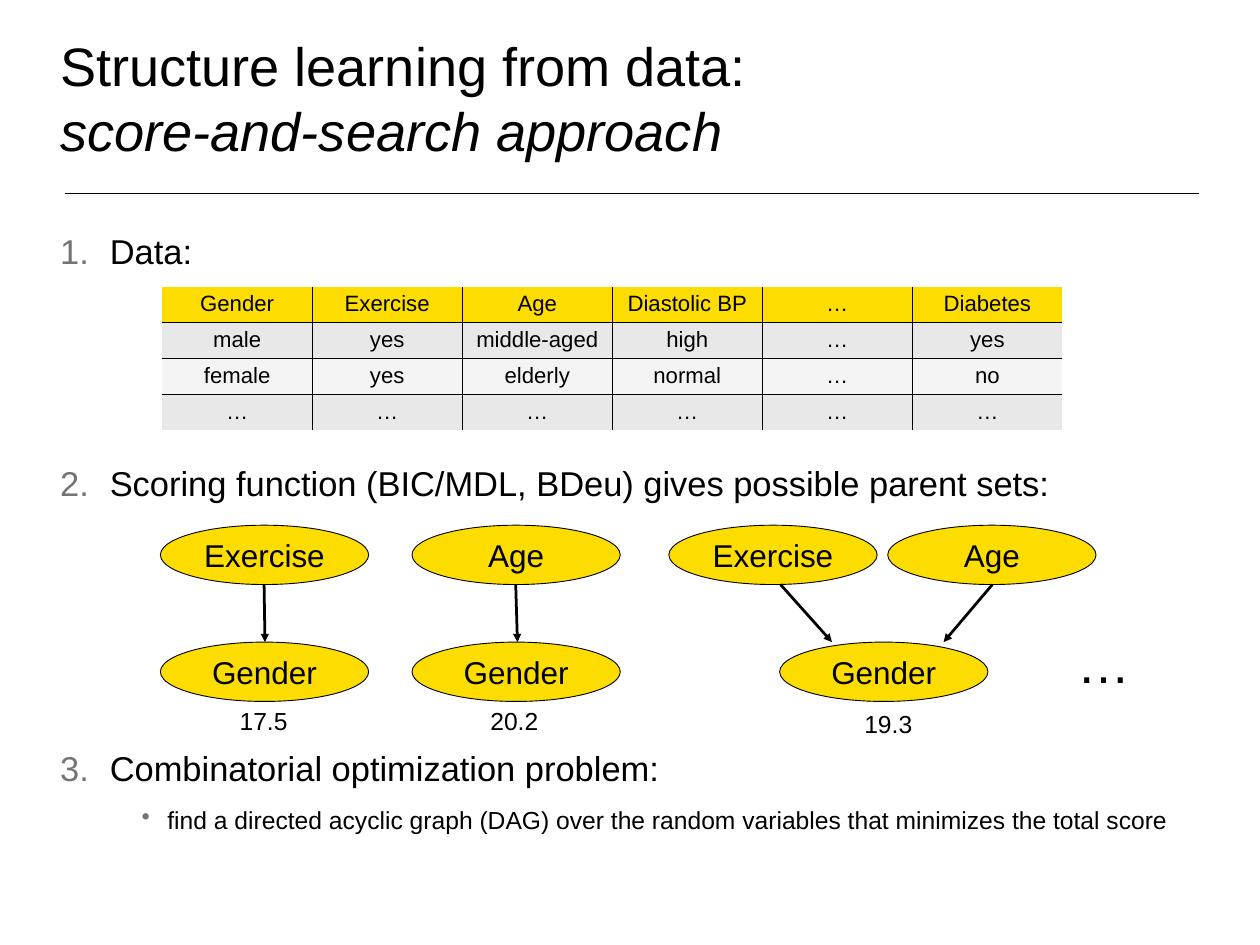
from dataclasses import dataclass

from pptx import Presentation
from pptx.dml.color import RGBColor
from pptx.enum.shapes import MSO_CONNECTOR, MSO_SHAPE
from pptx.enum.text import MSO_ANCHOR, PP_ALIGN
from pptx.oxml.ns import qn
from pptx.util import Emu, Inches, Pt
from lxml import etree

OVAL = MSO_SHAPE.OVAL
LINE = MSO_CONNECTOR.STRAIGHT
LEFT, MID = PP_ALIGN.LEFT, PP_ALIGN.CENTER
TOP, CENTER, BOTTOM = MSO_ANCHOR.TOP, MSO_ANCHOR.MIDDLE, MSO_ANCHOR.BOTTOM

FONT = "Arial"
BLACK, GOLD, GRAY = "000000", "FDDD00", "747474"
BANDS = ["E8E8E8", "F4F4F4"]
PLAIN = "{2D5ABB26-0587-4C30-8999-92F81FD0307C}"
WIDE, HIGH = Inches(14.22), Inches(10.67)

# All places below are percent of the slide's width or height
OVAL_W, OVAL_H = 16.53, 6.28
PARENT_Y, CHILD_Y = 55.58, 67.95


@dataclass
class Parent:
    name: str
    left: float
    start: float
    tip: float


@dataclass
class Family:
    left: float
    parents: list[Parent]
    score: str
    mid: float
    top: float


@dataclass
class Step:
    text: str
    gap: float
    sub: bool = False


ROWS = [
    ["Gender", "Exercise", "Age", "Diastolic BP", "…", "Diabetes"],
    ["male", "yes", "middle-aged", "high", "…", "yes"],
    ["female", "yes", "elderly", "normal", "…", "no"],
    ["…"] * 6,
]
STEPS = [
    Step("Data:", 0),
    Step("Scoring function (BIC/MDL, BDeu) gives possible parent sets:", 154.5),
    Step("Combinatorial optimization problem:", 198.5),
    Step("find a directed acyclic graph (DAG) over the random variables "
         "that minimizes the total score", 13, True),
]
SETS = [
    Family(12.73, [Parent("Exercise", 12.73, 20.96, 21.03)], "17.5", 20.92, 74.23),
    Family(32.7, [Parent("Age", 32.7, 40.93, 41.07)], "20.2", 40.82, 74.23),
    Family(61.88, [Parent("Exercise", 53.09, 61.95, 66.03),
                   Parent("Age", 70.46, 78.76, 74.89)], "19.3", 70.5, 74.6),
]


def x(share: float) -> Emu:
    return Emu(round(WIDE * share / 100))


def y(share: float) -> Emu:
    return Emu(round(HIGH * share / 100))


def color(code: str) -> RGBColor:
    return RGBColor.from_string(code)


def style(para, size: float, align=LEFT) -> None:
    para.alignment = align
    font = para.font
    font.name, font.size, font.bold = FONT, Pt(size), False
    font.color.rgb = color(BLACK)


def add_box(slide, left: float, top: float, width: float, height: float, anchor=TOP):
    box = slide.shapes.add_textbox(x(left), y(top), x(width), y(height))
    frame = box.text_frame
    frame.word_wrap = True
    frame.vertical_anchor = anchor
    frame.margin_left = frame.margin_right = Inches(0.06)
    frame.margin_top = frame.margin_bottom = Inches(0.06)
    return frame


def add_label(slide, text: str, mid: float, top: float, width: float,
              height: float, size: float) -> None:
    frame = add_box(slide, mid - width / 2, top, width, height)
    frame.margin_top = frame.margin_bottom = Inches(0.05)
    frame.word_wrap = False
    frame.text = text
    style(frame.paragraphs[0], size, MID)


def add_line(slide, x1: float, y1: float, x2: float, y2: float,
             weight: float, arrow: bool = False) -> None:
    line = slide.shapes.add_connector(LINE, x(x1), y(y1), x(x2), y(y2))
    line.line.color.rgb = color(BLACK)
    line.line.width = Pt(weight)
    if arrow:
        etree.SubElement(line.line._get_or_add_ln(), qn("a:tailEnd"), type="triangle")
    etree.SubElement(line._element.spPr, qn("a:effectLst"))


def add_node(slide, text: str, left: float, top: float) -> None:
    node = slide.shapes.add_shape(OVAL, x(left), y(top), x(OVAL_W), y(OVAL_H))
    node.shadow.inherit = False
    node.fill.solid()
    node.fill.fore_color.rgb = color(GOLD)
    node.line.color.rgb = color(BLACK)
    node.line.width = Pt(0.75)
    frame = node.text_frame
    frame.word_wrap = False
    frame.vertical_anchor = CENTER
    frame.text = text
    style(frame.paragraphs[0], 25.6, MID)


def add_step(para, step: Step) -> None:
    para.text = step.text
    style(para, 20 if step.sub else 28)
    para.space_before = Pt(step.gap)
    para.level = 1 if step.sub else 0
    indent, hang = (1.21, 0.29) if step.sub else (0.56, 0.56)
    props = para._p.get_or_add_pPr()
    props.set("marL", str(Inches(indent)))
    props.set("indent", str(-Inches(hang)))
    tint = etree.Element(qn("a:buClr"))
    etree.SubElement(tint, qn("a:srgbClr"), val=GRAY)
    mark = etree.Element(qn("a:buChar"), char="•") if step.sub else \
        etree.Element(qn("a:buAutoNum"), type="arabicPeriod")
    font = props.find(qn("a:defRPr"))
    font.addprevious(tint)
    font.addprevious(mark)


def add_grid(slide) -> None:
    count, cols = len(ROWS), len(ROWS[0])
    frame = slide.shapes.add_table(count, cols, x(12.87), y(30.37), x(71.45), y(15.18))
    table = frame.table
    table.first_row = table.horz_banding = False
    table._tbl.tblPr.find(qn("a:tableStyleId")).text = PLAIN
    for r, row in enumerate(ROWS):
        for c, text in enumerate(row):
            cell = table.cell(r, c)
            cell.text = text
            style(cell.text_frame.paragraphs[0], 18, MID)
            # Rules run between cells only
            inner = {"lnL": c > 0, "lnR": c < cols - 1,
                     "lnT": r > 0, "lnB": r < count - 1}
            props = cell._tc.get_or_add_tcPr()
            for side, shown in inner.items():
                if shown:
                    edge = etree.SubElement(props, qn(f"a:{side}"), w=str(Pt(1)))
                    fill = etree.SubElement(edge, qn("a:solidFill"))
                    etree.SubElement(fill, qn("a:srgbClr"), val=BLACK)
            cell.fill.solid()
            cell.fill.fore_color.rgb = color(BANDS[(r - 1) % 2] if r else GOLD)


def main() -> None:
    deck = Presentation()
    deck.slide_width, deck.slide_height = WIDE, HIGH
    slide = deck.slides.add_slide(deck.slide_layouts[6])

    # Title and rule
    title = add_box(slide, 4.36, 3.37, 91.21, 14.34, BOTTOM).paragraphs[0]
    style(title, 44)
    title.add_run().text = "Structure learning from data:"
    title.add_line_break()
    run = title.add_run()
    run.text = "score-and-search approach"
    run.font.italic = True
    add_line(slide, 5.13, 20.43, 95.15, 20.43, 0.75)

    # Numbered steps
    body = add_box(slide, 4.36, 23.81, 91.21, 67.29)
    for i, step in enumerate(STEPS):
        add_step(body.add_paragraph() if i else body.paragraphs[0], step)

    add_grid(slide)

    # Parent sets with their scores
    for group in SETS:
        add_node(slide, "Gender", group.left, CHILD_Y)
        for parent in group.parents:
            add_node(slide, parent.name, parent.left, PARENT_Y)
            add_line(slide, parent.start, PARENT_Y + OVAL_H, parent.tip, CHILD_Y, 2.25, True)
        add_label(slide, group.score, group.mid, group.top, 5.27, 4.12, 20)
    add_label(slide, "…", 87.59, 66.26, 5.7, 7.69, 43)

    deck.save("out.pptx")


if __name__ == "__main__":
    main()
